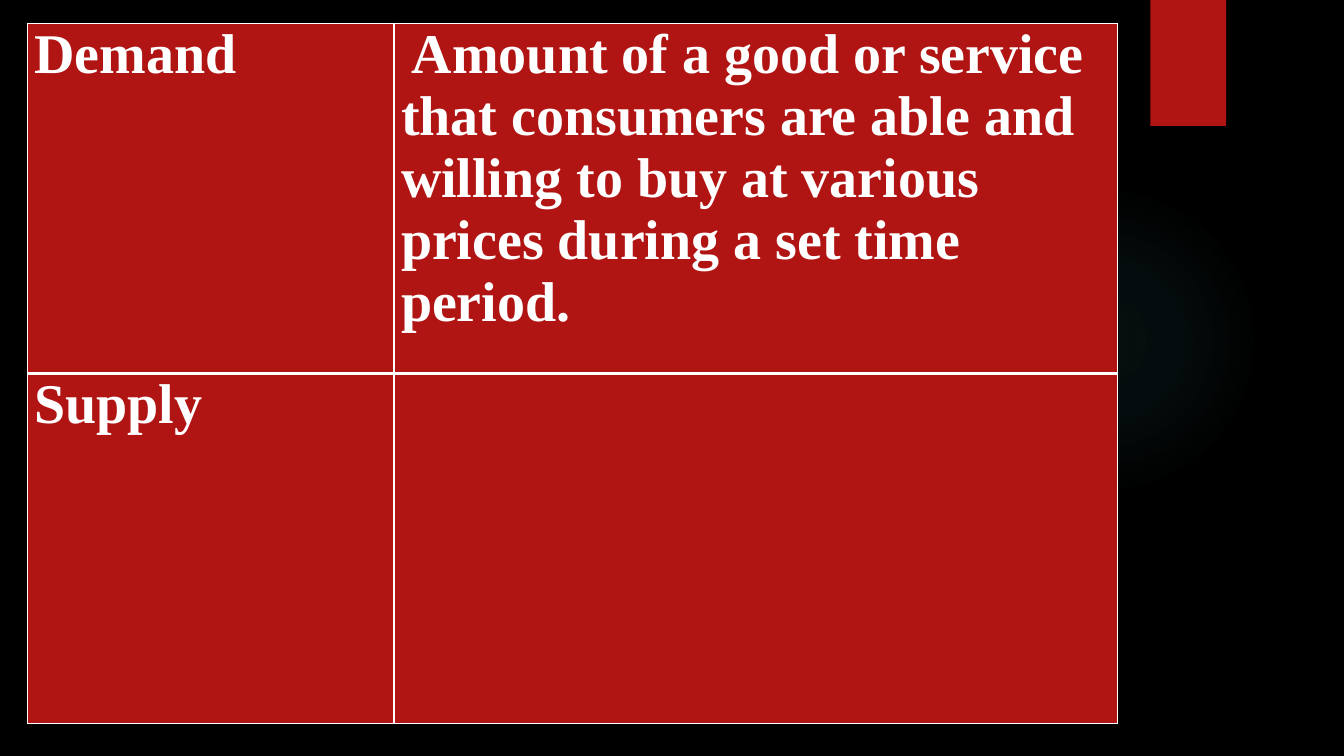
from lxml.etree import SubElement
from pptx import Presentation
from pptx.dml.color import RGBColor
from pptx.enum.shapes import MSO_SHAPE
from pptx.oxml.ns import qn
from pptx.util import Pt

RED, WHITE, BLACK, TEAL = "B01513", "FFFFFF", "000000", "50B9C1"
TERMS = [
    ("Demand", " Amount of a good or service that consumers are able and "
               "willing to buy at various prices during a set time period."),
    ("Supply", ""),
]
COLUMN_WIDTHS = (262, 516.5)
ROW_HEIGHT = 250
TABLE_LEFT, TABLE_TOP = 19.5, 16.75
OUTER_LINE, ROW_DIVIDER = 1, 3
GLOW_STOPS = [(0, 7), (36, 6), (69, 0)]  # position and opacity, percent


def paint(fill, color):
    fill.solid()
    fill.fore_color.rgb = RGBColor.from_string(color)


def add_plain_shape(kind, left, top, width, height):
    shape = slide.shapes.add_shape(kind, Pt(left), Pt(top), Pt(width), Pt(height))
    shape.shadow.inherit = False
    shape.line.fill.background()
    return shape


def fill_with_glow(shape):
    """Give the shape a radial gradient that fades out from its centre."""
    shape.fill.gradient()
    gradient = shape._element.spPr.find(qn("a:gradFill"))
    for child in list(gradient):
        gradient.remove(child)
    stops = SubElement(gradient, qn("a:gsLst"))
    for position, opacity in GLOW_STOPS:
        stop = SubElement(stops, qn("a:gs"), pos=str(position * 1000))
        color = SubElement(stop, qn("a:srgbClr"), val=TEAL)
        SubElement(color, qn("a:alpha"), val=str(opacity * 1000))
    radial = SubElement(gradient, qn("a:path"), path="circle")
    SubElement(radial, qn("a:fillToRect"), l="50000", t="50000", r="50000", b="50000")


def add_borders(cell, top, bottom):
    properties = cell._tc.get_or_add_tcPr()
    widths = {"L": OUTER_LINE, "R": OUTER_LINE, "T": top, "B": bottom}
    for side, width in widths.items():
        line = SubElement(properties, qn(f"a:ln{side}"), w=str(Pt(width)))
        SubElement(SubElement(line, qn("a:solidFill")), qn("a:srgbClr"), val=WHITE)


def write_cell(cell, wording):
    cell.margin_left = cell.margin_right = Pt(5)
    cell.margin_top = cell.margin_bottom = 0
    cell.text_frame.text = wording
    for run in cell.text_frame.paragraphs[0].runs:
        run.font.name = "Times New Roman"
        run.font.size = Pt(40)
        run.font.bold = True
        run.font.color.rgb = RGBColor.from_string(WHITE)


deck = Presentation()
deck.slide_width, deck.slide_height = Pt(960), Pt(540)
slide = deck.slides.add_slide(deck.slide_layouts[6])
paint(slide.background.fill, BLACK)

fill_with_glow(add_plain_shape(MSO_SHAPE.OVAL, 677.5, 131.75, 222, 222))
paint(add_plain_shape(MSO_SHAPE.RECTANGLE, 821.75, 0, 54, 90).fill, RED)

table = slide.shapes.add_table(
    len(TERMS), len(COLUMN_WIDTHS), Pt(TABLE_LEFT), Pt(TABLE_TOP),
    Pt(sum(COLUMN_WIDTHS)), Pt(ROW_HEIGHT * len(TERMS))).table
for column, width in zip(table.columns, COLUMN_WIDTHS):
    column.width = Pt(width)
for row, entry in enumerate(TERMS):
    table.rows[row].height = Pt(ROW_HEIGHT)
    top = ROW_DIVIDER if row > 0 else OUTER_LINE
    bottom = ROW_DIVIDER if row < len(TERMS) - 1 else OUTER_LINE
    for column, wording in enumerate(entry):
        cell = table.cell(row, column)
        add_borders(cell, top, bottom)
        paint(cell.fill, RED)
        write_cell(cell, wording)

deck.save("out.pptx")
